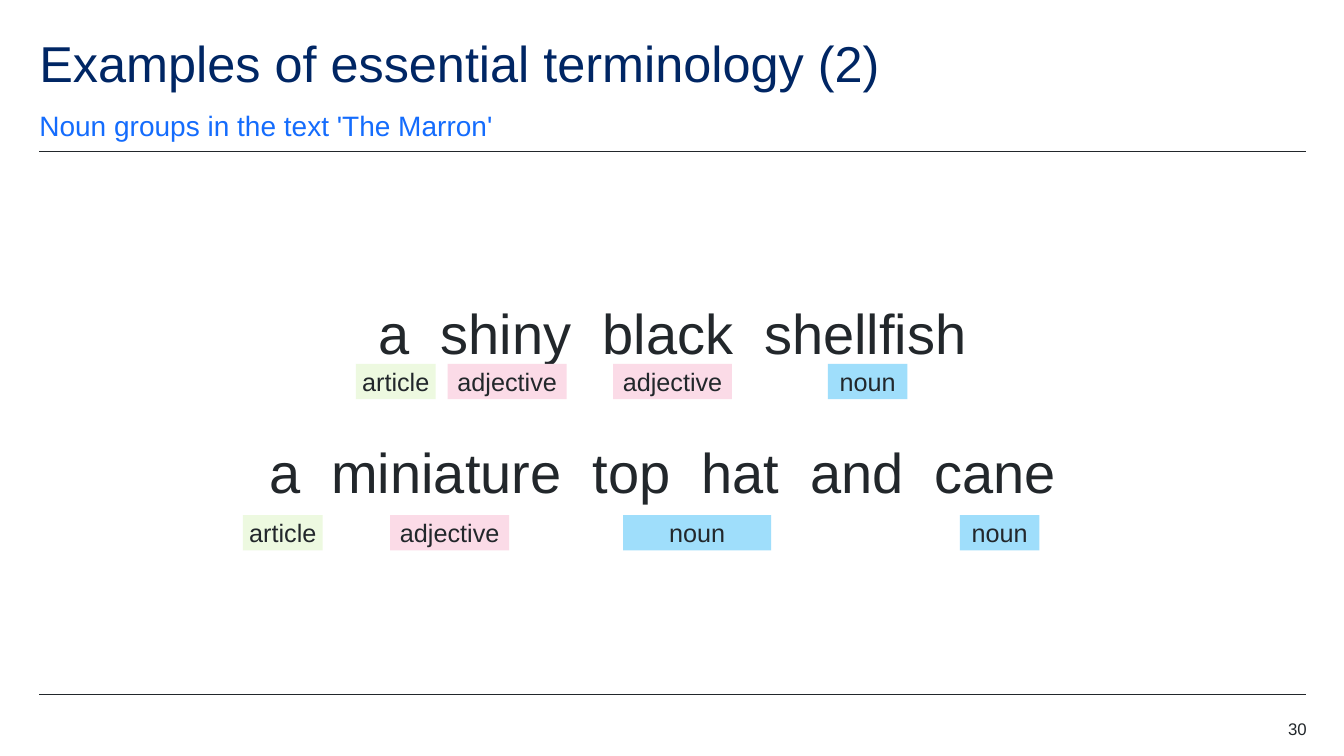
from pptx import Presentation
from pptx import util as u
from pptx.dml.color import RGBColor
from pptx.enum import shapes, text
from pptx.oxml.ns import qn
from lxml import etree

INK = RGBColor(0x22, 0x27, 0x2B)
NAVY = RGBColor(0x00, 0x26, 0x64)
BLUE = RGBColor(0x14, 0x6C, 0xFD)
GREEN = RGBColor(0xED, 0xF9, 0xE0)
PINK = RGBColor(0xFB, 0xDB, 0xE7)
SKY = RGBColor(0x9F, 0xDE, 0xFB)
FILLS = {"article": GREEN, "adjective": PINK, "noun": SKY}
TOP, MID, LOW = (text.MSO_ANCHOR.TOP, text.MSO_ANCHOR.MIDDLE,
                 text.MSO_ANCHOR.BOTTOM)
LEFT, MIDST, RIGHT = (text.PP_ALIGN.LEFT, text.PP_ALIGN.CENTER,
                      text.PP_ALIGN.RIGHT)
SCALE = 9144


def px(n):
    """Turn px, at 100 to the inch, into EMU."""
    return u.Emu(n * SCALE)


class Page:
    """Hold the style and the current slide."""

    def __init__(self, deck, font="Arial"):
        """Add a title-only slide to the deck."""
        self.font = font
        self.slide = deck.slides.add_slide(deck.slide_layouts[5])

    def letter(self, shape, words, size, color=INK, anchor=TOP, wrap=True,
               **form):
        """Put one styled paragraph into a shape."""
        frame = shape.text_frame
        frame.text = words
        para = frame.paragraphs[0]
        box = dict(margin_left=0, margin_top=0, margin_right=0,
                   margin_bottom=0, word_wrap=wrap, vertical_anchor=anchor,
                   auto_size=text.MSO_AUTO_SIZE.NONE)
        face = dict(name=self.font, size=u.Pt(size))
        form = {"alignment": LEFT, **form}
        for item, values in ((frame, box), (para, form), (para.font, face)):
            for key, value in values.items():
                setattr(item, key, value)
        para.font.color.rgb = color

    def title(self, at, words, size, **form):
        """Place and format the title."""
        shape = self.slide.shapes.title
        for key, value in zip(("left", "top", "width", "height"), at):
            setattr(shape, key, px(value))
        self.letter(shape, words, size, **form)

    def label(self, at, words, size, **form):
        """Add a text box."""
        shape = self.slide.shapes.add_textbox(*map(px, at))
        self.letter(shape, words, size, **form)

    def tag(self, left, top, width, words):
        """Add a coloured word-class tag."""
        shape = self.slide.shapes.add_shape(
            shapes.MSO_SHAPE.RECTANGLE, *map(px, (left, top, width, 35)))
        shape.shadow.inherit = False
        shape.fill.solid()
        shape.fill.fore_color.rgb = FILLS[words]
        shape.line.fill.background()
        self.letter(shape, words, 18, anchor=MID, wrap=False,
                    alignment=MIDST)

    def rule(self, left, right, top):
        """Add a thin level line."""
        line = self.slide.shapes.add_connector(
            shapes.MSO_CONNECTOR.STRAIGHT, *map(px, (left, top, right, top)))
        line.line.color.rgb = INK
        line.line.width = u.Pt(0.5)
        etree.SubElement(line._element.spPr, qn("a:effectLst"))


def main():
    """Build and save the slide."""
    deck = Presentation()
    deck.slide_width, deck.slide_height = px(1333), px(750)
    page = Page(deck)

    for top in (150, 689):
        page.rule(39, 1295, top)
    page.title((39, 39, 1102, 60), "Examples of essential terminology (2)",
               36, color=NAVY, line_spacing=0.9)
    page.label((39, 107, 1102, 34), "Noun groups in the text 'The Marron'",
               20, color=BLUE, anchor=LOW, line_spacing=1.5,
               space_after=u.Pt(12))

    page.label((39, 263, 1256, 112), "a  shiny  black  shellfish", 40,
               alignment=MIDST, line_spacing=1.5, space_after=u.Pt(6))
    page.label((267, 434, 803, 67), "a  miniature  top  hat  and  cane", 40)

    rows = {
        361: ((353, 79, "article"), (444, 118, "adjective"),
              (608, 118, "adjective"), (821, 79, "noun")),
        511: ((241, 79, "article"), (387, 118, "adjective"),
              (618, 147, "noun"), (952, 79, "noun")),
    }
    for top, tags in rows.items():
        for left, width, words in tags:
            page.tag(left, top, width, words)

    page.label((1217, 713, 79, 20), "30", 12, alignment=RIGHT)
    deck.save("out.pptx")


if __name__ == "__main__":
    main()
